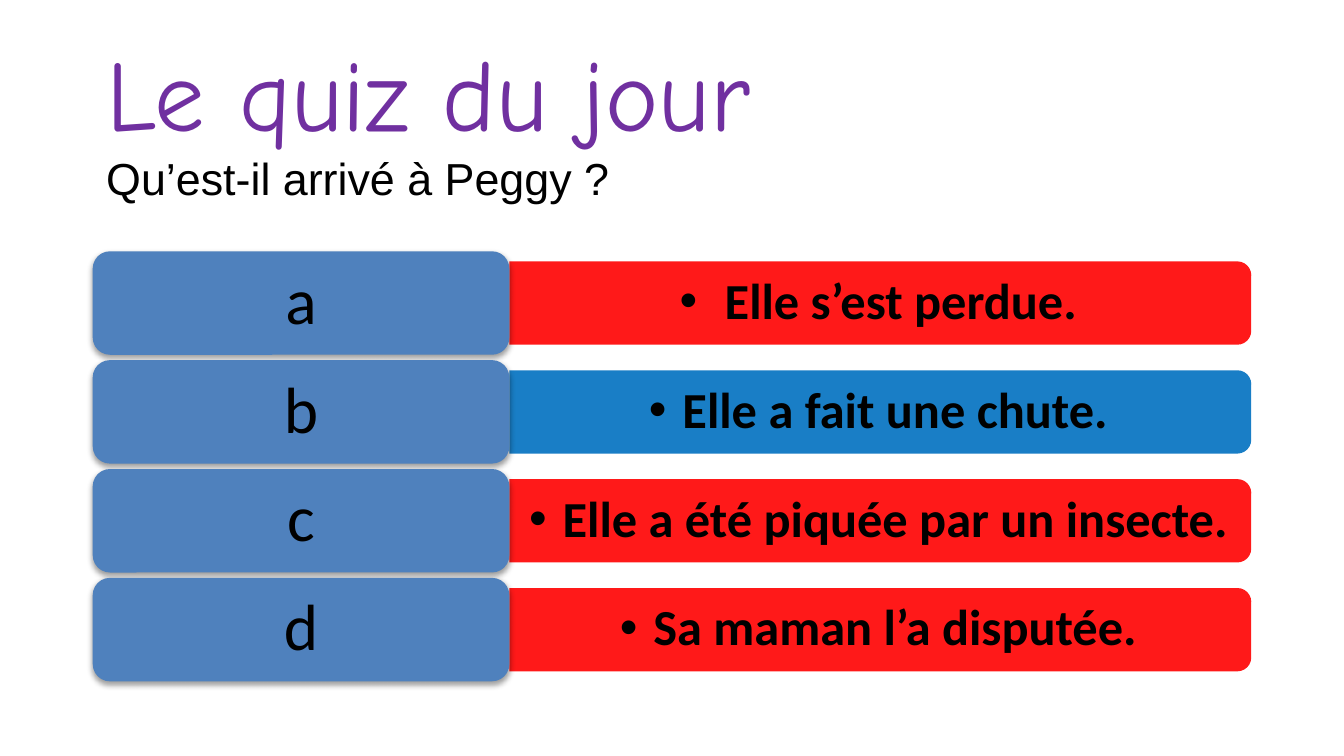
from dataclasses import dataclass

from lxml.etree import SubElement
from pptx import Presentation
from pptx.dml.color import RGBColor
from pptx.enum.shapes import MSO_SHAPE
from pptx.enum.text import MSO_ANCHOR, MSO_AUTO_SIZE, PP_ALIGN
from pptx.oxml.ns import qn
from pptx.util import Inches, Pt


@dataclass(frozen=True)
class Theme:
    ink: str = "000000"
    title: str = "7030A0"
    card: str = "4F81BD"
    red: str = "FF0000"
    blue: str = "0070C0"
    head: int = 54
    ask: int = 24
    letter: int = 35
    answer: int = 27


THEME = Theme()
WIDTH = 10
HEIGHT = WIDTH * 9 / 16
LEFT, TOP, STEP = 0.69, 1.87, 0.81
CARD_W, CARD_H = 3.1, 0.77
BAR_W, BAR_H = 5.52, 0.62
TEXT_W, TEXT_H = 5.49, 0.56
ROWS = [
    ("a", " Elle s’est perdue.", THEME.red),
    ("b", "Elle a fait une chute.", THEME.blue),
    ("c", "Elle a été piquée par un insecte.", THEME.red),
    ("d", "Sa maman l’a disputée.", THEME.red),
]


def write(par, text, size, font="Calibri", color=THEME.ink, bold=False,
          align=PP_ALIGN.CENTER, space=0.9):
    par.alignment = align
    par.line_spacing = space
    run = par.add_run()
    run.text = text
    run.font.size = Pt(size)
    run.font.name = font
    run.font.bold = bold
    run.font.color.rgb = RGBColor.from_string(color)


def set_frame(frame, side, edge):
    frame.word_wrap = True
    frame.auto_size = MSO_AUTO_SIZE.NONE
    frame.vertical_anchor = MSO_ANCHOR.MIDDLE
    frame.margin_left = frame.margin_right = Inches(side)
    frame.margin_top = frame.margin_bottom = Inches(edge)
    return frame.paragraphs[0]


def add_block(slide, kind, box, color):
    block = slide.shapes.add_shape(kind, *map(Inches, box))
    block.shadow.inherit = False
    block.fill.solid()
    block.fill.fore_color.rgb = RGBColor.from_string(color)
    block.line.fill.background()
    return block


def add_bullet(par):
    props = par._p.get_or_add_pPr()
    props.set("marL", str(Inches(0.25)))
    props.set("indent", str(Inches(-0.25)))
    SubElement(props, qn("a:buFont"), typeface="Arial")
    SubElement(props, qn("a:buChar"), char="•")


def add_shade(block):
    effects = block._element.spPr.find(qn("a:effectLst"))
    shade = SubElement(effects, qn("a:outerShdw"), blurRad=str(Pt(3.1)),
                       dist=str(Pt(1.6)), dir="5400000", rotWithShape="0")
    color = SubElement(shade, qn("a:srgbClr"), val=THEME.ink)
    SubElement(color, qn("a:alpha"), val="38000")


def add_bar(slide, mid, color):
    center = LEFT + CARD_W + BAR_W / 2
    box = (center - BAR_H / 2, mid - BAR_W / 2, BAR_H, BAR_W)
    bar = add_block(slide, MSO_SHAPE.ROUND_2_SAME_RECTANGLE, box, color)
    bar.rotation = 90
    tint = bar._element.spPr.find(qn("a:solidFill")).find(qn("a:srgbClr"))
    SubElement(tint, qn("a:alpha"), val="90000")


def add_answer(slide, mid, text):
    box = (LEFT + CARD_W, mid - TEXT_H / 2, TEXT_W, TEXT_H)
    label = slide.shapes.add_textbox(*map(Inches, box))
    par = set_frame(label.text_frame, 0.11, 0.06)
    write(par, text, THEME.answer, bold=True)
    add_bullet(par)


def add_card(slide, mid, letter):
    box = (LEFT, mid - CARD_H / 2, CARD_W, CARD_H)
    card = add_block(slide, MSO_SHAPE.ROUNDED_RECTANGLE, box, THEME.card)
    add_shade(card)
    write(set_frame(card.text_frame, 0.15, 0.07), letter, THEME.letter)


def add_title(slide):
    title = slide.shapes.title
    title.left, title.top = Inches(LEFT), Inches(0.2)
    title.width, title.height = Inches(8.62), Inches(1.35)
    par = set_frame(title.text_frame, 0.1, 0.05)
    style = {"align": PP_ALIGN.LEFT, "space": 1.0}
    write(par, "Le quiz du jour", THEME.head, font="Comic Neue",
          color=THEME.title, **style)
    par.add_line_break()
    write(par, "Qu’est-il arrivé à Peggy ?", THEME.ask, font="Arial", **style)


def main():
    deck = Presentation()
    deck.slide_width, deck.slide_height = Inches(WIDTH), Inches(HEIGHT)
    slide = deck.slides.add_slide(deck.slide_layouts[5])
    add_title(slide)
    for row, (letter, text, color) in enumerate(ROWS):
        mid = TOP + CARD_H / 2 + row * STEP
        add_bar(slide, mid, color)
        add_answer(slide, mid, text)
        add_card(slide, mid, letter)
    deck.save("out.pptx")


if __name__ == "__main__":
    main()
